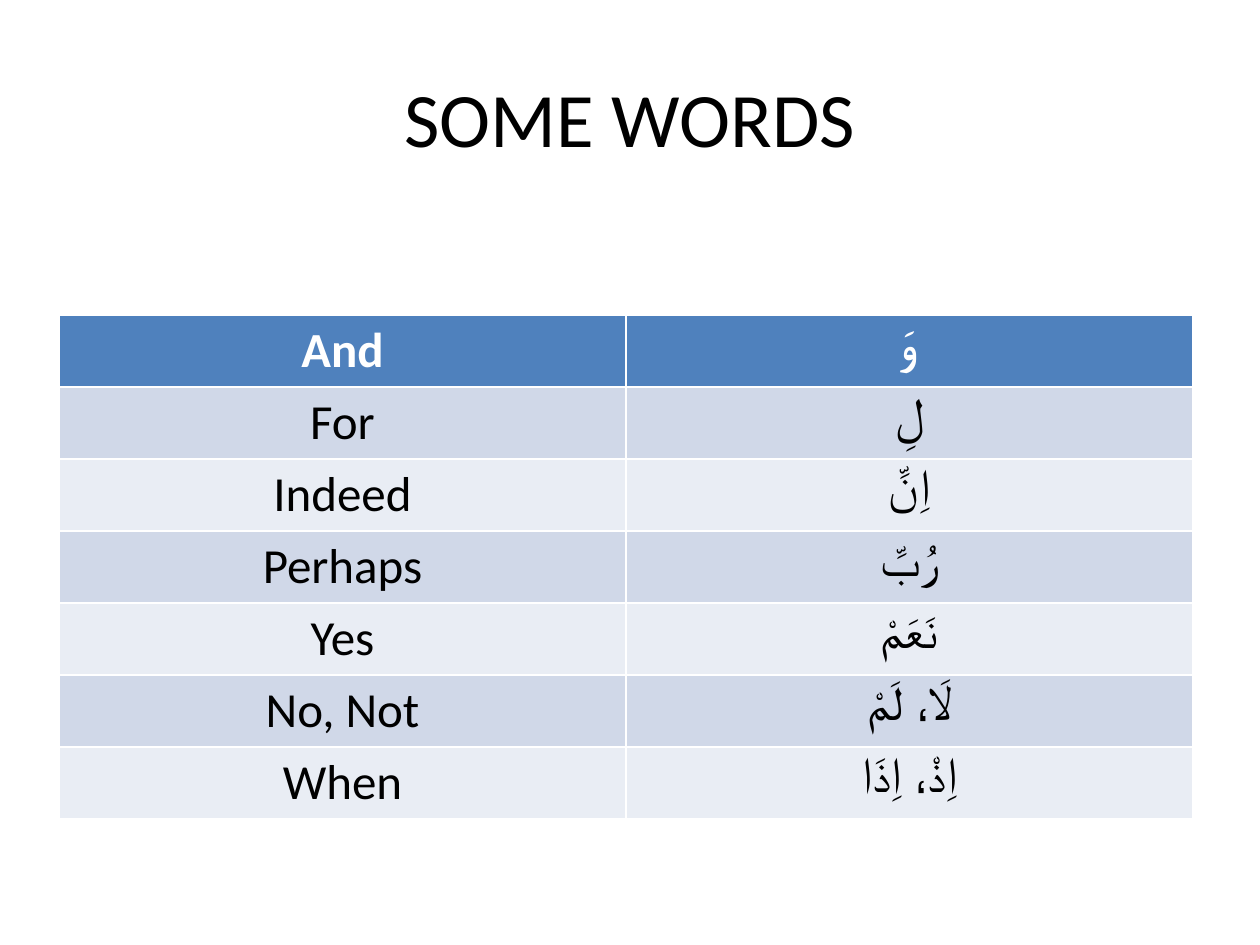
from dataclasses import dataclass

from pptx import Presentation
from pptx.dml.color import RGBColor
from pptx.enum.text import MSO_ANCHOR, PP_ALIGN
from pptx.util import Emu, Pt

# Content
TITLE = "SOME WORDS"
WORDS = [
    ("And", "وَ"),
    ("For", "لِ"),
    ("Indeed", "اِنَّ"),
    ("Perhaps", "رُبَّ"),
    ("Yes", "نَعَمْ"),
    ("No, Not", "لَا، لَمْ"),
    ("When", "اِذْ، اِذَا"),
]


@dataclass(frozen=True)
class Theme:
    font: str = "Calibri"
    title_size: int = 44
    cell_size: int = 28
    text: str = "000000"
    header_text: str = "FFFFFF"
    header_fill: str = "4F81BD"
    band_fills: tuple = ("D0D8E8", "E9EDF4")


THEME = Theme()

# Layout in px, 126 to the inch
PX = 914400 / 126
PAGE = (1260, 945)
TITLE_BOX = (63, 38, 1134, 157)
TABLE_LEFT, TABLE_TOP, TABLE_WIDTH, ROW_HEIGHT = 59, 315, 1134, 72


def px(*lengths):
    return [Emu(round(length * PX)) for length in lengths]


def write(frame, text, size, color, bold=False):
    para = frame.paragraphs[0]
    para.alignment = PP_ALIGN.CENTER
    span = para.add_run()
    span.text = text
    span.font.name = THEME.font
    span.font.size = Pt(size)
    span.font.bold = bold
    span.font.color.rgb = RGBColor.from_string(color)


def add_title(page):
    frame = page.shapes.add_textbox(*px(*TITLE_BOX)).text_frame
    frame.word_wrap = True
    frame.vertical_anchor = MSO_ANCHOR.MIDDLE
    write(frame, TITLE, THEME.title_size, THEME.text)


def add_word_table(page):
    # The default table style supplies the white cell borders
    area = px(TABLE_LEFT, TABLE_TOP, TABLE_WIDTH, ROW_HEIGHT * len(WORDS))
    table = page.shapes.add_table(len(WORDS), len(WORDS[0]), *area).table
    for row, pair in enumerate(WORDS):
        header = row == 0
        fill = THEME.header_fill if header else THEME.band_fills[(row - 1) % 2]
        color = THEME.header_text if header else THEME.text
        for column, word in enumerate(pair):
            cell = table.cell(row, column)
            cell.fill.solid()
            cell.fill.fore_color.rgb = RGBColor.from_string(fill)
            write(cell.text_frame, word, THEME.cell_size, color, header)


def main():
    deck = Presentation()
    deck.slide_width, deck.slide_height = px(*PAGE)
    page = deck.slides.add_slide(deck.slide_layouts[6])
    add_title(page)
    add_word_table(page)
    deck.save("out.pptx")


if __name__ == "__main__":
    main()
